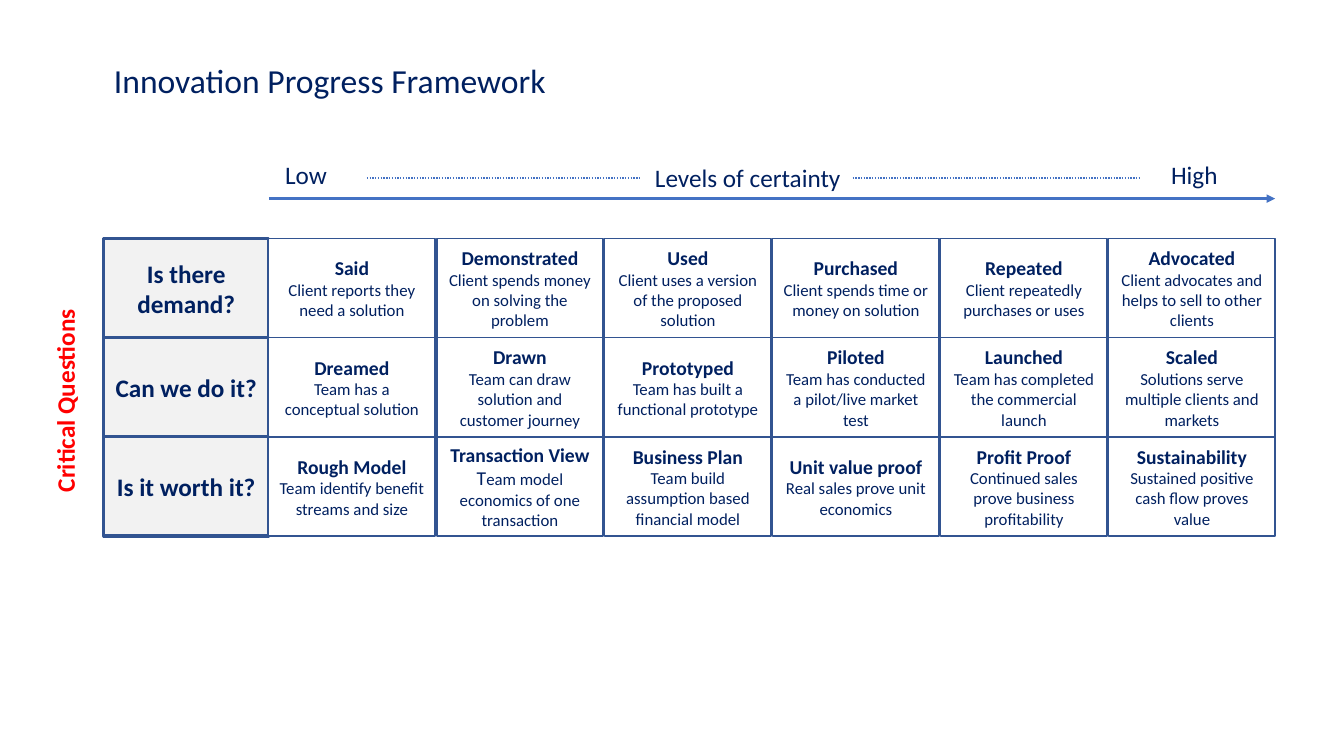
import lxml.etree
import pptx
import pptx.dml.color
import pptx.enum.dml
import pptx.enum.shapes
import pptx.enum.text
import pptx.oxml.ns
import pptx.util

Pt = pptx.util.Pt
RGBColor = pptx.dml.color.RGBColor
ALIGN = pptx.enum.text.PP_ALIGN
ANCHOR = pptx.enum.text.MSO_ANCHOR

NAVY = RGBColor(0x00, 0x20, 0x60)
RED = RGBColor(0xFF, 0x00, 0x00)
BORDER = RGBColor(0x32, 0x54, 0x91)
ARROW = RGBColor(0x44, 0x72, 0xC4)
GREY = RGBColor(0xF2, 0xF2, 0xF2)
WHITE = RGBColor(0xFF, 0xFF, 0xFF)
FONT = "Calibri"

# Each question is followed by its levels, from low to high certainty
FRAMEWORK = [
    ("Is there demand?", [
        ("Said", "Client reports they need a solution"),
        ("Demonstrated", "Client spends money on solving the problem"),
        ("Used", "Client uses a version of the proposed solution"),
        ("Purchased", "Client spends time or money on solution"),
        ("Repeated", "Client repeatedly purchases or uses"),
        ("Advocated", "Client advocates and helps to sell to other clients"),
    ]),
    ("Can we do it?", [
        ("Dreamed", "Team has a conceptual solution"),
        ("Drawn", "Team can draw solution and customer journey"),
        ("Prototyped", "Team has built a functional prototype"),
        ("Piloted", "Team has conducted a pilot/live market test"),
        ("Launched", "Team has completed the commercial launch"),
        ("Scaled", "Solutions serve multiple clients and markets"),
    ]),
    ("Is it worth it?", [
        ("Rough Model", "Team identify benefit streams and size"),
        ("Transaction View", "Team model economics of one transaction"),
        ("Business Plan", "Team build assumption based financial model"),
        ("Unit value proof", "Real sales prove unit economics"),
        ("Profit Proof", "Continued sales prove business profitability"),
        ("Sustainability", "Sustained positive cash flow proves value"),
    ]),
]
LARGE_INITIAL = "Transaction View"  # its detail opens with a larger letter


def style(paragraph, size, bold=False, color=NAVY, align=ALIGN.LEFT):
    paragraph.alignment = align
    font = paragraph.font
    font.name, font.size, font.bold = FONT, Pt(size), bold
    font.color.rgb = color


def add_label(slide, text, left, top, width, bold=False, color=NAVY):
    label = slide.shapes.add_textbox(Pt(left), Pt(top), Pt(width), Pt(29))
    label.text_frame.word_wrap = False
    label.text_frame.auto_size = pptx.enum.text.MSO_AUTO_SIZE.SHAPE_TO_FIT_TEXT
    paragraph = label.text_frame.paragraphs[0]
    paragraph.text = text
    style(paragraph, 18, bold, color)
    return label


def add_line(slide, left, right, y, width):
    line = slide.shapes.add_connector(
        pptx.enum.shapes.MSO_CONNECTOR.STRAIGHT, Pt(left), Pt(y), Pt(right), Pt(y))
    line.line.color.rgb = ARROW
    line.line.width = Pt(width)
    lxml.etree.SubElement(line._element.spPr, pptx.oxml.ns.qn("a:effectLst"))
    return line


def add_box(slide, left, top, width, height, fill, border_width):
    box = slide.shapes.add_shape(
        pptx.enum.shapes.MSO_SHAPE.RECTANGLE, Pt(left), Pt(top), Pt(width), Pt(height))
    box.shadow.inherit = False
    box.fill.solid()
    box.fill.fore_color.rgb = fill
    box.line.color.rgb = BORDER
    box.line.width = Pt(border_width)
    box.text_frame.word_wrap = True
    box.text_frame.vertical_anchor = ANCHOR.MIDDLE
    return box.text_frame


def add_title(slide, left, top, width, height):
    title = slide.shapes.title
    title.left, title.top, title.width, title.height = map(Pt, (left, top, width, height))
    frame = title.text_frame
    frame.text = "Innovation Progress Framework"
    frame.word_wrap = False
    frame.auto_size = pptx.enum.text.MSO_AUTO_SIZE.SHAPE_TO_FIT_TEXT
    frame.vertical_anchor = ANCHOR.TOP
    style(frame.paragraphs[0], 24)


def add_certainty_scale(slide, left, top, width):
    # Arrow from low to high
    arrow = add_line(slide, left, left + width, top + 31.7, 2)
    outline = arrow._element.spPr.find(pptx.oxml.ns.qn("a:ln"))
    lxml.etree.SubElement(outline, pptx.oxml.ns.qn("a:tailEnd"), type="triangle")
    # Labels, with dotted lines between them
    add_label(slide, "Low", left + 4.6, top, 44.6)
    add_label(slide, "Levels of certainty", left + 268.8, top + 2.2, 148.3)
    add_label(slide, "High", left + 637.4, top, 48.2)
    for start, end in ((70, 265.2), (417, 623)):
        dots = add_line(slide, left + start, left + end, top + 17, 1)
        dots.line.dash_style = pptx.enum.dml.MSO_LINE.ROUND_DOT


def add_level(frame, name, detail):
    heading = frame.paragraphs[0]
    heading.text = name
    style(heading, 14, True, align=ALIGN.CENTER)
    paragraph = frame.add_paragraph()
    if name == LARGE_INITIAL:
        initial = paragraph.add_run()
        initial.text, detail = detail[0], detail[1:]
        initial.font.size = Pt(14)
    paragraph.add_run().text = detail
    style(paragraph, 12, align=ALIGN.CENTER)


def add_framework_grid(slide, left, top, width, height):
    question_width, column_pitch, gap = 117.6, 120, 1.2
    row_height = height / len(FRAMEWORK)
    levels_left = left + width - 6 * column_pitch + gap
    for row, (question, levels) in enumerate(FRAMEWORK):
        y = top + row * row_height
        frame = add_box(slide, left, y, question_width, row_height, GREY, 2.25)
        frame.text = question
        style(frame.paragraphs[0], 18, True, align=ALIGN.CENTER)
        for column, (name, detail) in enumerate(levels):
            frame = add_box(slide, levels_left + column * column_pitch, y,
                            column_pitch - gap, row_height, WHITE, 1)
            add_level(frame, name, detail)
    # Side heading, turned to read upwards beside the rows
    side = add_label(slide, "Critical Questions", left - 100.8,
                     top + height / 2 - 5.6, 146.2, True, RED)
    side.rotation = 270


def main():
    presentation = pptx.Presentation()
    presentation.slide_width, presentation.slide_height = Pt(960), Pt(540)
    slide = presentation.slides.add_slide(presentation.slide_layouts[5])
    add_framework_grid(slide, 74.2, 170.5, 836.6, 212.4)
    add_certainty_scale(slide, 192, 110.2, 718.8)
    add_title(slide, 74.2, 38.9, 326.2, 36.4)
    presentation.save("out.pptx")


if __name__ == "__main__":
    main()
